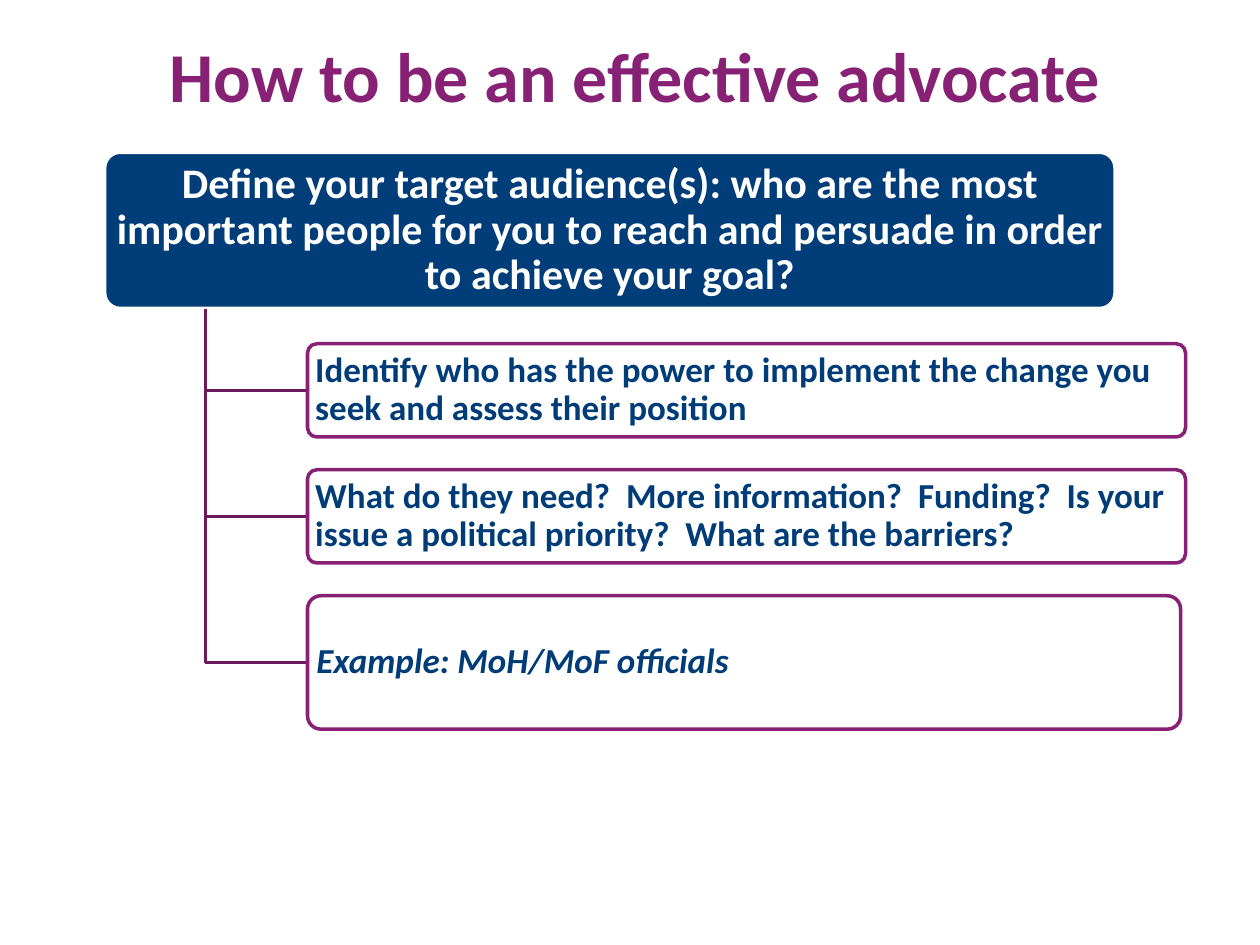
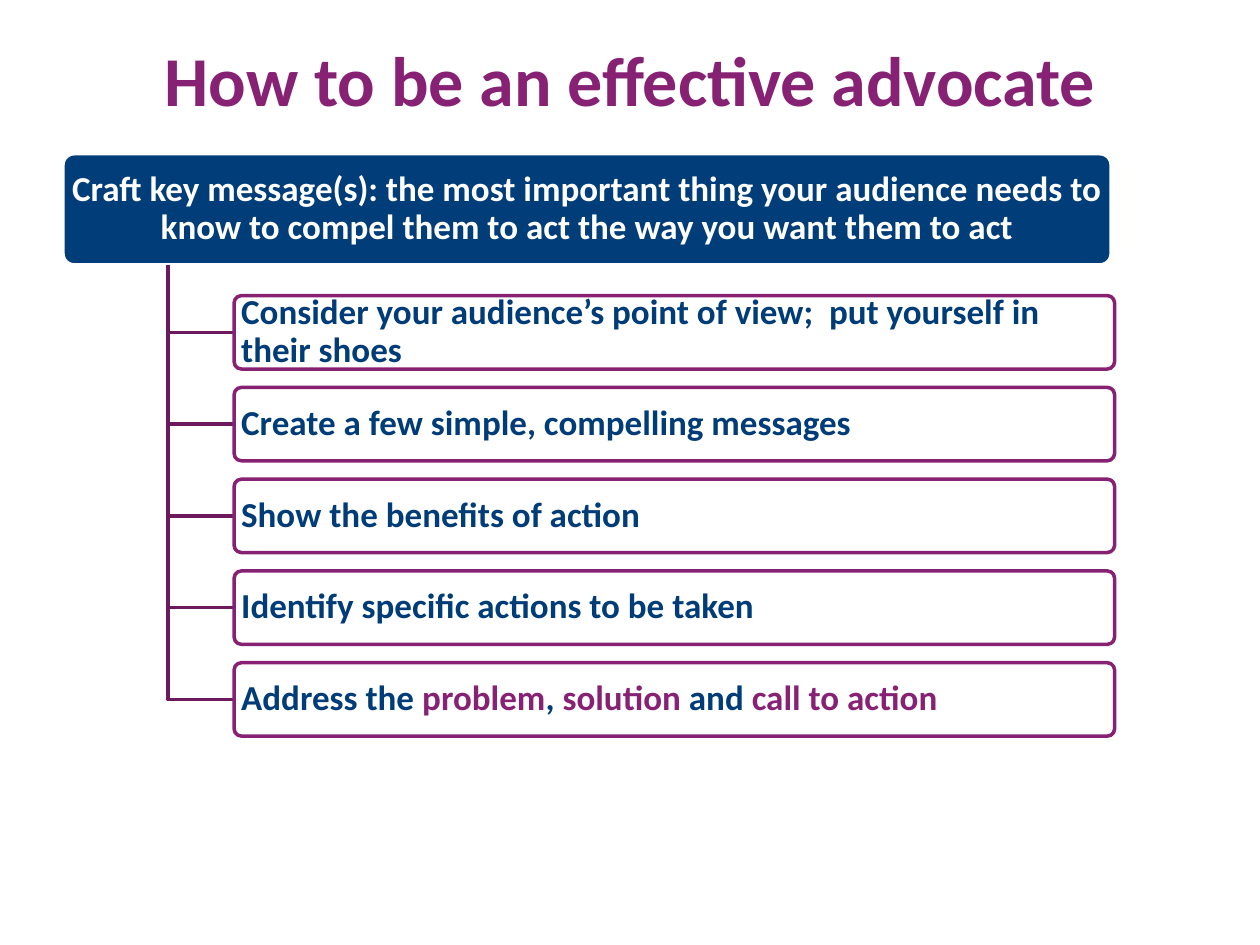
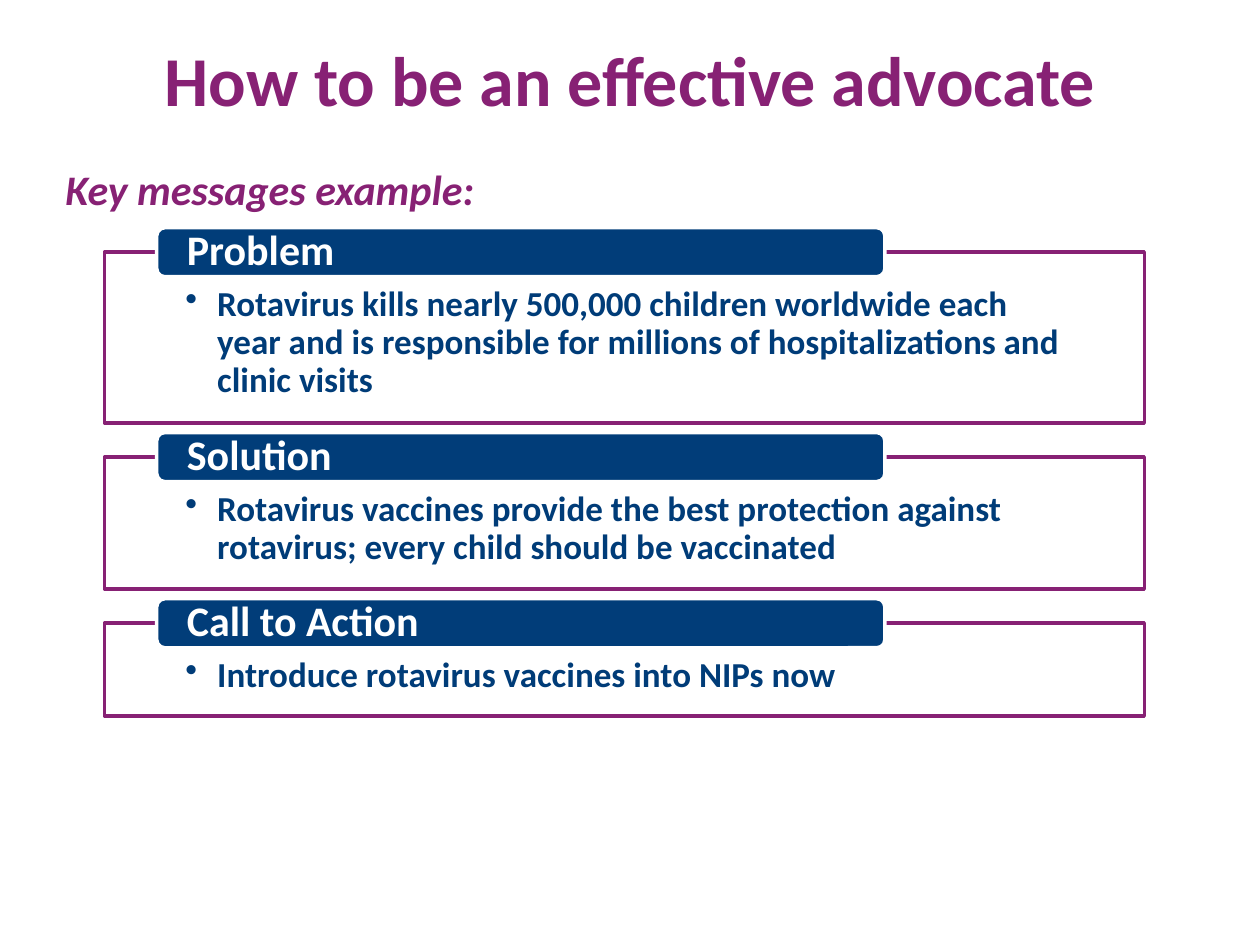
from lxml import etree
from pptx import Presentation
from pptx.dml.color import RGBColor
from pptx.enum.shapes import MSO_SHAPE
from pptx.enum.text import MSO_ANCHOR, PP_ALIGN
from pptx.oxml.ns import qn
from pptx.util import Cm, Pt

ROUNDED, RECTANGLE = MSO_SHAPE.ROUNDED_RECTANGLE, MSO_SHAPE.RECTANGLE
TOP, MIDDLE = MSO_ANCHOR.TOP, MSO_ANCHOR.MIDDLE
LEFT, CENTER = PP_ALIGN.LEFT, PP_ALIGN.CENTER

COLORS = {
    "purple": "872174",
    "branch": "6C1A5D",
    "navy": "013D79",
    "ink": "003C78",
    "white": "FFFFFF",
}
FONT = "Calibri"
TITLE = "How to be an effective advocate"
LINE_WIDTH = Pt(2)
SMALL_INSETS = (0.1, 0.08, 0.1, 0.08)


def rgb(name):
    return RGBColor.from_string(COLORS[name])


# Text
def format_run(run, size, color, italic=False):
    run.font.name = FONT
    run.font.size = Pt(size)
    run.font.bold = True
    run.font.italic = italic
    run.font.color.rgb = rgb(color)


def write(shape, text, size, color, align=LEFT, anchor=MIDDLE, insets=None,
          spacing=0.9, italic=False, bullet=False):
    """Fill a shape with one paragraph; parts between bars turn purple."""
    frame = shape.text_frame
    frame.word_wrap = True
    frame.vertical_anchor = anchor
    if insets:
        (frame.margin_left, frame.margin_top,
         frame.margin_right, frame.margin_bottom) = map(Cm, insets)
    first, *others = text.split("|")
    frame.text = first
    paragraph = frame.paragraphs[0]
    if bullet:
        add_bullet(paragraph)
    paragraph.alignment = align
    paragraph.line_spacing = spacing
    for part in others:
        paragraph.add_run().text = part
    for index, run in enumerate(paragraph.runs):
        format_run(run, size, "purple" if index % 2 else color, italic)


def add_bullet(paragraph):
    properties = paragraph._p.get_or_add_pPr()
    properties.set("marL", str(Cm(0.64)))
    properties.set("indent", str(-Cm(0.64)))
    etree.SubElement(properties, qn("a:buChar")).set("char", "•")


# Shapes
def add_box(slide, kind, box, fill, line, opacity=100):
    shape = slide.shapes.add_shape(kind, *map(Cm, box))
    shape.shadow.inherit = False
    shape.fill.solid()
    shape.fill.fore_color.rgb = rgb(fill)
    shape.line.color.rgb = rgb(line)
    shape.line.width = LINE_WIDTH
    if opacity < 100:
        fill_color = shape._element.spPr.find(qn("a:solidFill"))[0]
        etree.SubElement(fill_color, qn("a:alpha")).set("val", str(opacity * 1000))
    return shape


def add_branch(slide, x, top, bottom, end):
    outline = slide.shapes.build_freeform(Cm(x), Cm(top))
    outline.add_line_segments([(Cm(x), Cm(bottom)), (Cm(end), Cm(bottom))], close=False)
    branch = outline.convert_to_shape()
    branch.shadow.inherit = False
    branch.fill.background()
    branch.line.color.rgb = rgb("branch")
    branch.line.width = LINE_WIDTH


# Regions
def add_title_slide(deck, box=(1.27, 0, 22.86, 3.18)):
    slide = deck.slides.add_slide(deck.slide_layouts[6])
    title = slide.shapes.add_textbox(*map(Cm, box))
    write(title, TITLE, 40, "purple", CENTER, spacing=1)
    return slide


def add_hierarchy(slide, box, heading, size, points, point_left, point_top, gap):
    """Heading in the box; points (text, width, height, italic) offset from it."""
    left, top, width, height = box
    header = add_box(slide, ROUNDED, box, "navy", "white")
    header.adjustments[0] = 0.1
    write(header, heading, size, "white", CENTER, insets=SMALL_INSETS)

    trunk, x, y = left + width / 10, left + point_left, top + point_top
    for text, point_width, point_height, italic in points:
        add_branch(slide, trunk, top + height, y + point_height / 2, x)
        point = add_box(slide, ROUNDED, (x, y, point_width, point_height),
                        "white", "purple", opacity=90)
        point.adjustments[0] = 0.1
        write(point, text, 20, "ink", insets=SMALL_INSETS, italic=italic)
        y += point_height + gap


def add_message(slide, box, label, message):
    """Framed message with a label tab across its top edge."""
    left, top = box[:2]
    frame = add_box(slide, RECTANGLE, box, "white", "purple", opacity=90)
    write(frame, message, 20, "ink", anchor=TOP,
          insets=(1.63, 0.69, 1.63, 0.41), bullet=True)
    tab = add_box(slide, ROUNDED, (left + 1.05, top - 0.49, 14.68, 0.99), "navy", "white")
    write(tab, label, 24, "white", insets=(0.56, 0, 0.56, 0))


# Slides
def build_audience(deck):
    slide = add_title_slide(deck, (1.9, 0, 21.8, 3.02))
    points = [
        ("Identify who has the power to implement the change you seek "
         "and assess their position", 17.7, 1.88, False),
        ("What do they need?  More information?  Funding?  Is your issue "
         "a political priority?  What are the barriers?", 17.7, 1.88, False),
        ("Example: MoH/MoF officials", 17.6, 2.69, True),
    ]
    add_hierarchy(slide, (2.11, 3.07, 20.37, 3.15),
                  "Define your target audience(s): who are the most important people "
                  "for you to reach and persuade in order to achieve your goal?",
                  24, points, point_left=4.09, point_top=3.86, gap=0.66)


def build_key_messages(deck):
    slide = add_title_slide(deck)
    points = [
        "Consider your audience’s point of view;  put yourself in their shoes",
        "Create a few simple, compelling messages",
        "Show the benefits of action",
        "Identify specific actions to be taken",
        "Address the |problem|, |solution| and |call to action",
    ]
    add_hierarchy(slide, (1.27, 3.1, 21.13, 2.24),
                  "Craft key message(s): the most important thing your audience needs "
                  "to know to compel them to act the way you want them to act",
                  20, [(text, 17.75, 1.48, False) for text in points],
                  point_left=3.45, point_top=2.86, gap=0.37)


def build_example(deck):
    slide = add_title_slide(deck)
    intro = slide.shapes.add_textbox(Cm(1.07), Cm(3.18), Cm(23.93), Cm(1.3))
    write(intro, "Key messages example:", 24, "purple", anchor=TOP, spacing=1, italic=True)

    messages = [
        ("Problem", 3.45, "Rotavirus kills nearly 500,000 children worldwide each year "
         "and is responsible for millions of hospitalizations and clinic visits"),
        ("Solution", 2.67, "Rotavirus vaccines provide the best protection against "
         "rotavirus; every child should be vaccinated"),
        ("Call to Action", 1.88, "Introduce rotavirus vaccines into NIPs now"),
    ]
    top = 5.08
    for label, height, message in messages:
        add_message(slide, (2.11, top, 20.96, height), label, message)
        top += height + 0.68


def main():
    deck = Presentation()
    deck.slide_width, deck.slide_height = Cm(25.4), Cm(19.05)
    build_audience(deck)
    build_key_messages(deck)
    build_example(deck)
    deck.save("out.pptx")


if __name__ == "__main__":
    main()
